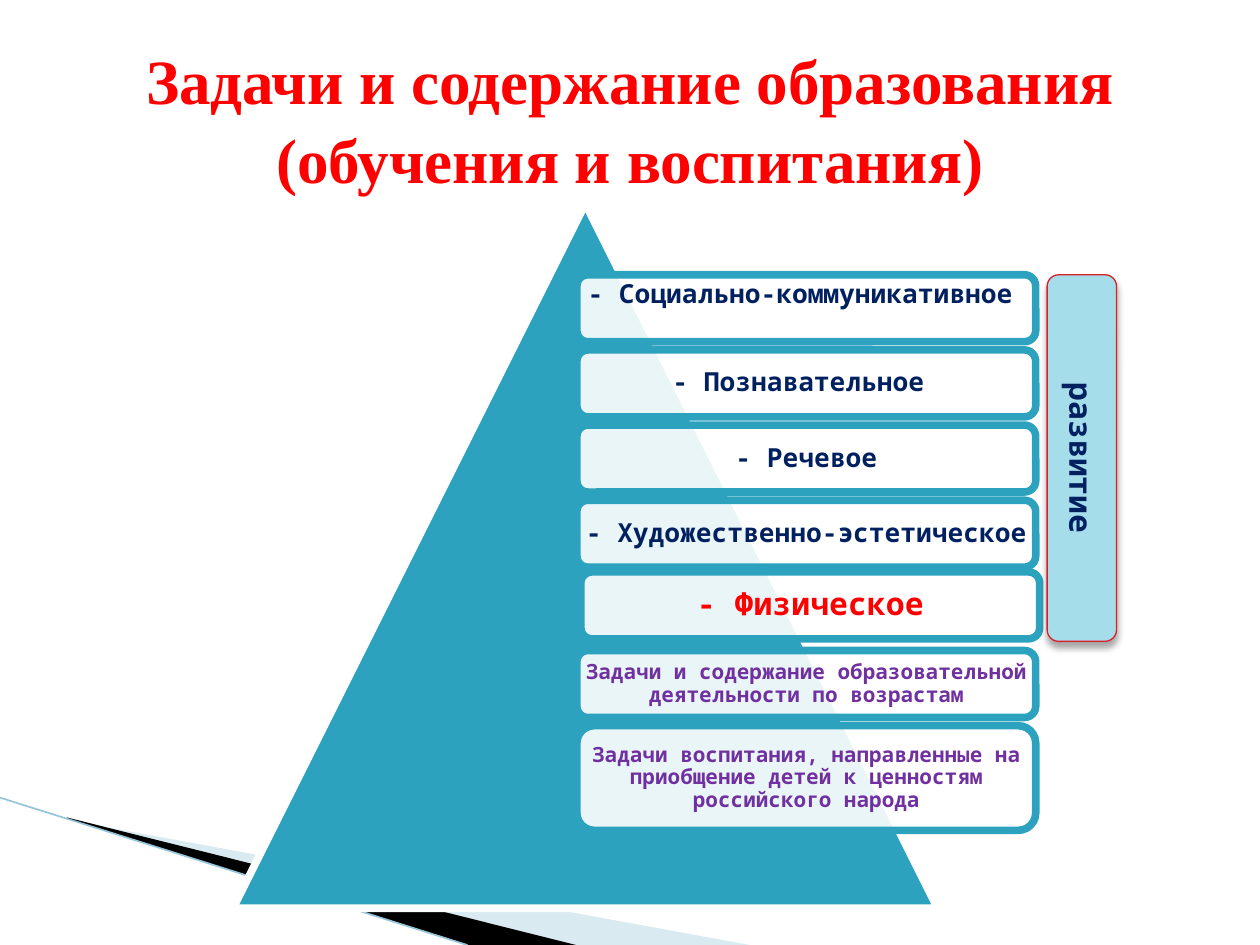
"""Build a slide on the tasks and content of education with a pyramid of areas."""
from dataclasses import dataclass

from lxml import etree
from pptx import Presentation
from pptx import util as u
from pptx.dml.color import RGBColor
from pptx.enum import shapes, text
from pptx.oxml.ns import qn

MONO = "Noto Sans Mono"
TEAL, NAVY, RED, PURPLE, WHITE = "2DA2BF", "002060", "FF0000", "7030A0", "FFFFFF"
ROW_LEFT, ROW_TOP, ROW_PITCH, ROW_WIDTH = 11.63, 5.54, 1.515, 9.25


@dataclass
class Area:
    label: str
    size: float = 15
    color: str = NAVY
    height: float = 1.35
    shift: tuple[float, float] = (0, 0)
    at_top: bool = False


@dataclass
class Wedge:
    points: list[tuple[float, float]]
    color: str
    opacity: int = 100


AREAS = [
    Area("- Социально-коммуникативное", at_top=True),
    Area("- Познавательное "),
    Area("- Речевое"),
    Area("- Художественно-эстетическое"),
    Area("- Физическое", 18, RED, shift=(0.08, -0.07)),
    Area("Задачи и содержание образовательной деятельности по возрастам", 12, PURPLE),
    Area("Задачи воспитания, направленные на приобщение детей к ценностям "
         "российского народа", 12, PURPLE, 2.11),
]
WEDGES = [
    Wedge([(1.4, 16.54), (15.11, 19.05), (11.58, 19.05), (1.4, 16.51)], "A0CBDC", 40),
    Wedge([(1.35, 16.48), (11.61, 19.05), (9.45, 19.05), (1.37, 16.51)], "000000"),
]


def rgb(code: str) -> RGBColor:
    return RGBColor.from_string(code)


def paint(shape, fill: str, line: str | None = None, width: float = 0,
          opacity: int = 100) -> None:
    shape.shadow.inherit = False
    shape.fill.solid()
    shape.fill.fore_color.rgb = rgb(fill)
    if opacity < 100:
        color = shape._element.spPr.find(f"{qn('a:solidFill')}/{qn('a:srgbClr')}")
        etree.SubElement(color, qn("a:alpha"), val=str(opacity * 1000))
    if line:
        shape.line.color.rgb = rgb(line)
        shape.line.width = u.Pt(width)
    else:
        shape.line.fill.background()


def write(shape, words: str, size: float, color: str, font: str = MONO,
          spacing: float = 1, inset: float = 0.05):
    frame = shape.text_frame
    frame.text = words
    frame.word_wrap = True
    frame.vertical_anchor = text.MSO_ANCHOR.MIDDLE
    frame.margin_left = frame.margin_right = u.Cm(inset)
    frame.margin_top = frame.margin_bottom = u.Cm(inset)
    paragraph = frame.paragraphs[0]
    paragraph.alignment = text.PP_ALIGN.CENTER
    paragraph.line_spacing = spacing
    for run in paragraph.runs:
        run.font.name = font
        run.font.size = u.Pt(size)
        run.font.bold = True
        run.font.color.rgb = rgb(color)
    return frame


def add_box(slide, kind, left: float, top: float, width: float, height: float):
    return slide.shapes.add_shape(kind, u.Cm(left), u.Cm(top), u.Cm(width), u.Cm(height))


def add_wedge(slide, wedge: Wedge) -> None:
    start, *rest = [(u.Cm(x), u.Cm(y)) for x, y in wedge.points]
    builder = slide.shapes.build_freeform(*start)
    builder.add_line_segments(rest, close=True)
    paint(builder.convert_to_shape(), wedge.color, opacity=wedge.opacity)


def add_area(slide, area: Area, index: int) -> None:
    across, down = area.shift
    row = add_box(slide, shapes.MSO_SHAPE.ROUNDED_RECTANGLE, ROW_LEFT + across,
                  ROW_TOP + index * ROW_PITCH + down, ROW_WIDTH, area.height)
    paint(row, WHITE, TEAL, 4.33, 90)
    frame = write(row, area.label, area.size, area.color, spacing=0.9)
    if area.at_top:
        frame.vertical_anchor = text.MSO_ANCHOR.TOP
        frame.margin_left = u.Cm(0.15)
        frame.paragraphs[0].alignment = text.PP_ALIGN.LEFT


def add_accent_line(slide) -> None:
    accent = slide.shapes.add_connector(
        shapes.MSO_CONNECTOR.STRAIGHT, u.Cm(0), u.Cm(16.08), u.Cm(9.42), u.Cm(19.05))
    accent.line.color.rgb = rgb("97C5D8")
    accent.line.width = u.Pt(0.95)
    etree.SubElement(accent._element.spPr, qn("a:effectLst"))


def add_development(slide) -> None:
    development = add_box(slide, shapes.MSO_SHAPE.ROUNDED_RECTANGLE,
                          21.11, ROW_TOP, 1.4, 7.39)
    paint(development, "A6DDEA", "DA1F28", 0.75)
    frame = write(development, "развитие", 18, NAVY, inset=0.13)
    frame._txBody.bodyPr.set("vert", "vert")
    effects = development._element.spPr.find(qn("a:effectLst"))
    shadow = etree.SubElement(effects, qn("a:outerShdw"), blurRad=str(u.Pt(4)),
                              dist=str(u.Pt(3)), dir="5400000", rotWithShape="0")
    color = etree.SubElement(shadow, qn("a:srgbClr"), val="000000")
    etree.SubElement(color, qn("a:alpha"), val="35000")


def main() -> None:
    deck = Presentation()
    deck.slide_width, deck.slide_height = u.Cm(25.4), u.Cm(19.05)
    slide = deck.slides.add_slide(deck.slide_layouts[6])
    for wedge in WEDGES:
        add_wedge(slide, wedge)
    add_accent_line(slide)
    pyramid = add_box(slide, shapes.MSO_SHAPE.ISOSCELES_TRIANGLE, 4.7, 4.11, 14.2, 14.2)
    paint(pyramid, TEAL, WHITE, 4.33)
    for index, area in enumerate(AREAS):
        add_area(slide, area, index)
    title = slide.shapes.add_textbox(u.Cm(0), u.Cm(0), u.Cm(25.4), u.Cm(4.72))
    write(title, "Задачи и содержание образования (обучения и воспитания)", 36, RED,
          "Times New Roman", 1.05, 0.25)
    add_development(slide)
    deck.save("out.pptx")


if __name__ == "__main__":
    main()
